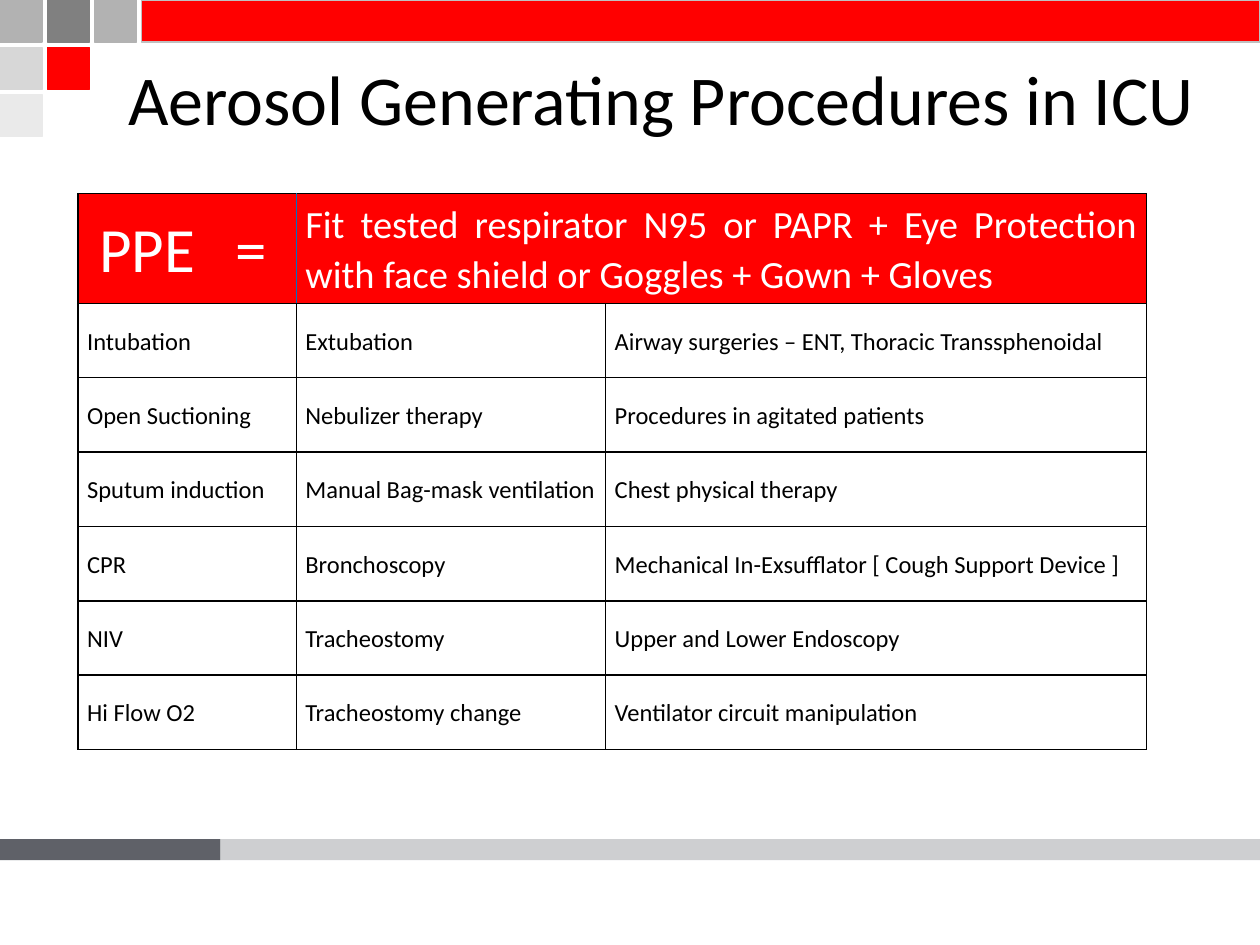
from dataclasses import dataclass
from lxml.etree import SubElement
from pptx import Presentation
from pptx.dml.color import RGBColor
from pptx.enum.shapes import MSO_SHAPE
from pptx.enum.text import MSO_ANCHOR, MSO_AUTO_SIZE, PP_ALIGN
from pptx.oxml.ns import qn
from pptx.util import Pt


@dataclass(frozen=True)
class Theme:
    font: str = "Calibri"
    red: str = "FF0000"
    white: str = "FFFFFF"
    black: str = "000000"
    divider: str = "0070C0"
    silver: str = "B2B2B2"
    gray: str = "808080"
    light: str = "D7D7D7"
    pale: str = "EAEAEA"
    banner_edge: str = "C0C0C0"
    slate: str = "5F6168"
    title_size: int = 40
    ppe_size: int = 36
    equipment_size: int = 22
    body_size: int = 14


theme = Theme()
presentation = Presentation()
presentation.slide_width, presentation.slide_height = Pt(720), Pt(540)
slide = presentation.slides.add_slide(presentation.slide_layouts[5])


def add_block(left, top, width, height, color, edge=None):
    block = slide.shapes.add_shape(
        MSO_SHAPE.RECTANGLE, Pt(left), Pt(top), Pt(width), Pt(height))
    block.shadow.inherit = False
    block.fill.solid()
    block.fill.fore_color.rgb = RGBColor.from_string(color)
    if edge:
        block.line.color.rgb = RGBColor.from_string(edge)
        block.line.width = Pt(0.75)
    else:
        block.line.fill.background()
    return block


def add_border(cell, side, color):
    border = SubElement(cell._tc.get_or_add_tcPr(), qn(f"a:ln{side}"), w=str(Pt(1)))
    SubElement(SubElement(border, qn("a:solidFill")), qn("a:srgbClr"), val=color)


tile_rows = [
    [theme.silver, theme.gray, theme.silver],
    [theme.light, theme.red],
    [theme.pale],
]
tile_pitch, tile_size = 27, 24
for row, tile_colors in enumerate(tile_rows):
    for column, color in enumerate(tile_colors):
        add_block(column * tile_pitch, row * tile_pitch, tile_size, tile_size, color, color)
add_block(81, 0, 639, tile_size, theme.red, theme.banner_edge)

footer_split = 126
add_block(0, 479.5, footer_split, 12, theme.slate)
footer = add_block(footer_split, 479.5, 720 - footer_split, 12, theme.slate)
footer_color = footer._element.spPr.find(qn("a:solidFill")).find(qn("a:srgbClr"))
SubElement(footer_color, qn("a:alpha"), val="30000")

title = slide.shapes.title
title.left, title.top, title.width, title.height = Pt(57), Pt(27.5), Pt(641.5), Pt(56)
title.text_frame.text = "Aerosol Generating Procedures in ICU"
title.text_frame.auto_size = MSO_AUTO_SIZE.NONE
title.text_frame.vertical_anchor = MSO_ANCHOR.MIDDLE
heading = title.text_frame.paragraphs[0]
heading.alignment = PP_ALIGN.CENTER
heading.font.name = theme.font
heading.font.size = Pt(theme.title_size)
heading.font.color.rgb = RGBColor.from_string(theme.black)

procedures = [
    ["PPE\t=", "Fit tested respirator N95 or PAPR + Eye Protection with face shield "
     "or Goggles + Gown + Gloves", ""],
    ["Intubation", "Extubation", "Airway surgeries – ENT, Thoracic Transsphenoidal"],
    ["Open Suctioning", "Nebulizer therapy", "Procedures in agitated patients"],
    ["Sputum induction", "Manual Bag-mask ventilation", "Chest physical therapy"],
    ["CPR", "Bronchoscopy", "Mechanical In-Exsufflator [ Cough Support Device ]"],
    ["NIV", "Tracheostomy", "Upper and Lower Endoscopy"],
    ["Hi Flow O2", "Tracheostomy change", "Ventilator circuit manipulation"],
]
header_sizes = [theme.ppe_size, theme.equipment_size, theme.equipment_size]
column_widths = [124.7, 176.8, 309]
row_height = 42.5
table = slide.shapes.add_table(
    len(procedures), len(column_widths), Pt(44.6), Pt(110.7),
    Pt(sum(column_widths)), Pt(row_height * len(procedures))).table
table.first_row = False
table.horz_banding = False
for column, width in zip(table.columns, column_widths):
    column.width = Pt(width)
table.cell(0, 1).merge(table.cell(0, 2))

for row, entries in enumerate(procedures):
    table.rows[row].height = Pt(row_height)
    for column, entry in enumerate(entries):
        cell = table.cell(row, column)
        cell.margin_left = cell.margin_right = Pt(5.2)
        cell.margin_top = cell.margin_bottom = Pt(2.7)
        cell.vertical_anchor = MSO_ANCHOR.MIDDLE
        for side in "LRTB":
            beside_divider = row == 0 and (column, side) in [(0, "R"), (1, "L")]
            add_border(cell, side, theme.divider if beside_divider else theme.black)
        if row == 0:
            cell.fill.solid()
            cell.fill.fore_color.rgb = RGBColor.from_string(theme.red)
        else:
            cell.fill.background()
        if cell.is_spanned:
            continue
        cell.text_frame.text = entry
        paragraph = cell.text_frame.paragraphs[0]
        paragraph.alignment = PP_ALIGN.JUSTIFY
        paragraph.line_spacing = 1.07
        if "\t" in entry:
            cell.margin_left = Pt(12)
            paragraph.alignment = PP_ALIGN.LEFT
            tabs = SubElement(paragraph._p.get_or_add_pPr(), qn("a:tabLst"))
            SubElement(tabs, qn("a:tab"), pos=str(Pt(78)), algn="l")
        paragraph.font.name = theme.font
        paragraph.font.size = Pt(header_sizes[column] if row == 0 else theme.body_size)
        paragraph.font.color.rgb = RGBColor.from_string(
            theme.white if row == 0 else theme.black)

presentation.save("out.pptx")
